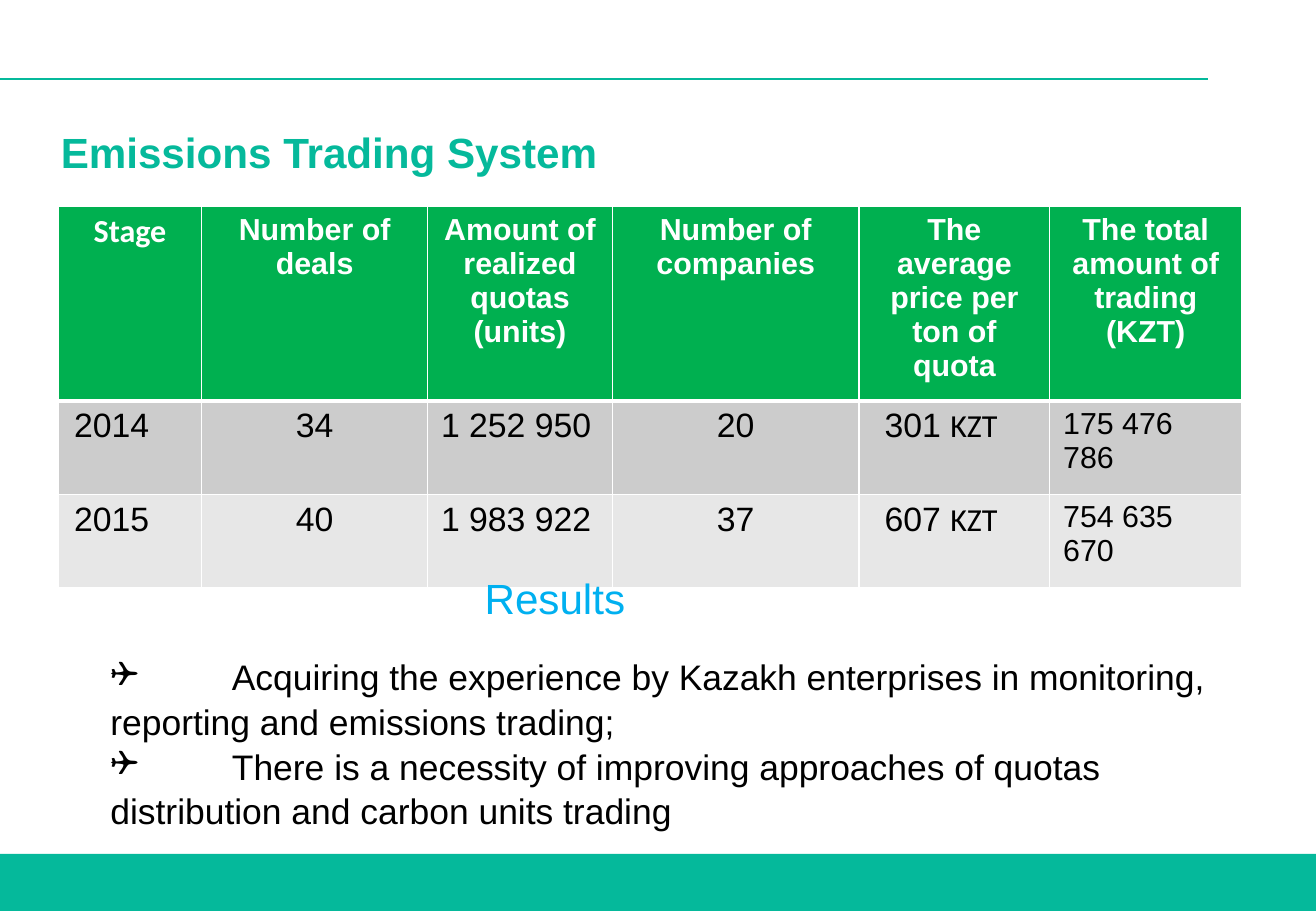
from lxml import etree
from pptx import Presentation
from pptx.dml.color import RGBColor
from pptx.enum.shapes import MSO_CONNECTOR, MSO_SHAPE
from pptx.enum.text import MSO_ANCHOR, PP_ALIGN
from pptx.oxml import parse_xml
from pptx.oxml.ns import nsdecls, qn
from pptx.util import Inches, Pt

LEFT, CENTER, JUSTIFY = PP_ALIGN.LEFT, PP_ALIGN.CENTER, PP_ALIGN.JUSTIFY
BOTTOM = MSO_ANCHOR.BOTTOM
RECT = MSO_SHAPE.RECTANGLE
STRAIGHT = MSO_CONNECTOR.STRAIGHT

THEME = {
    "teal": "05B99B",
    "green": "00B050",
    "white": "FFFFFF",
    "bands": ["CCCCCC", "E7E7E7"],
    "title": ({"size": Pt(25), "bold": True, "name": "Arial"}, "05B99B"),
    "head": ({"size": Pt(18), "bold": True, "name": "Arial"}, "FFFFFF"),
    "stage": ({"size": Pt(19), "bold": True, "name": "Calibri"}, "FFFFFF"),
    "cell": ({"size": Pt(20), "bold": False, "name": "Arial"}, "000000"),
    "unit": ({"size": Pt(19), "bold": False, "name": "Calibri"}, "000000"),
    "total": ({"size": Pt(18), "bold": False, "name": "Arial"}, "000000"),
    "results": ({"size": Pt(25), "bold": False, "name": "Arial"}, "00B0F0"),
    "body": ({"size": Pt(21), "bold": False, "name": "Arial"}, "000000"),
}


def style(font, look):
    values, color = THEME[look]
    for key, value in values.items():
        setattr(font, key, value)
    font.color.rgb = RGBColor.from_string(color)


def write(frame, text, look, align=LEFT):
    frame.word_wrap = True
    frame.text = text
    for para in frame.paragraphs:
        para.alignment = align
        style(para.runs[0].font, look)


deck = Presentation()
deck.slide_width, deck.slide_height = Inches(10.83), Inches(7.5)
slide = deck.slides.add_slide(deck.slide_layouts[6])
shapes = slide.shapes

footer = shapes.add_shape(RECT, 0, Inches(7.03), deck.slide_width, Inches(0.47))
footer.shadow.inherit = False
footer.fill.solid()
footer.fill.fore_color.rgb = RGBColor.from_string(THEME["teal"])
footer.line.fill.background()

rule = shapes.add_connector(STRAIGHT, 0, Inches(0.65), Inches(9.94), Inches(0.65))
rule.line.width = Pt(0.75)
rule.line.color.rgb = RGBColor.from_string(THEME["teal"])
etree.SubElement(rule._element.spPr, qn("a:effectLst"))

title = shapes.add_textbox(Inches(0.5), Inches(0.21), Inches(9.75), Inches(1.25))
frame = title.text_frame
for side in ("left", "top", "right", "bottom"):
    setattr(frame, f"margin_{side}", 0)
frame.vertical_anchor = BOTTOM
write(frame, "Emissions Trading System", "title")
frame.paragraphs[0].line_spacing = 0.9

rows = [
    ["Stage", "Number of\ndeals", "Amount of realized quotas (units)",
     "Number of\ncompanies", "The average price per ton of quota",
     "The total amount of trading (KZT)"],
    ["2014", "34", "1 252 950", "20", "301 ", "175 476 786"],
    ["2015", "40", "1 983 922", "37", "607 ", "754 635 670"],
]
widths = [1.18, 1.86, 1.52, 2.03, 1.57, 1.58]
heights = [1.3, 0.77, 0.77]
aligns = [LEFT, CENTER, LEFT, CENTER, LEFT, LEFT]
insets = [0.13, 0.13, 0.11, 0.13, 0.13, 0.11]
PRICE, TOTAL = 4, 5

table = shapes.add_table(len(rows), len(widths), Inches(0.48), Inches(1.7),
                         Inches(sum(widths)), Inches(sum(heights))).table
for col, width in zip(table.columns, widths):
    col.width = Inches(width)
for row, height in zip(table.rows, heights):
    row.height = Inches(height)

for r, texts in enumerate(rows):
    head = r == 0
    fill = THEME["green"] if head else THEME["bands"][r - 1]
    for c, text in enumerate(texts):
        cell = table.cell(r, c)
        inset = 0.13 if head else insets[c]
        indent = 0.08 if c == PRICE and not head else 0
        cell.margin_left, cell.margin_right = Inches(inset + indent), Inches(inset)
        cell.margin_top = cell.margin_bottom = Inches(0.05)
        props = cell._tc.get_or_add_tcPr()
        edges = {"lnL": 1, "lnR": 1, "lnT": 3 if r == 1 else 1, "lnB": 3 if head else 1}
        for edge, weight in edges.items():
            props.append(parse_xml(
                f'<a:{edge} {nsdecls("a")} w="{Pt(weight)}"><a:solidFill>'
                f'<a:srgbClr val="{THEME["white"]}"/></a:solidFill></a:{edge}>'))
        cell.fill.solid()
        cell.fill.fore_color.rgb = RGBColor.from_string(fill)
        if head:
            look = "stage" if c == 0 else "head"
        else:
            look = "total" if c == TOTAL else "cell"
        write(cell.text_frame, text, look, CENTER if head else aligns[c])
        if c == PRICE and not head:
            unit = cell.text_frame.paragraphs[0].add_run()
            unit.text = "KZT"
            style(unit.font, "unit")

results = shapes.add_textbox(Inches(3.89), Inches(4.66), Inches(2.9), Inches(0.53))
write(results.text_frame, "Results", "results")

points = [
    "Acquiring the experience by Kazakh enterprises in monitoring,",
    "reporting and emissions trading;",
    "There is a necessity of improving approaches of quotas",
    "distribution and carbon units trading",
]
body = shapes.add_textbox(Inches(0.81), Inches(5.33), Inches(9.58), Inches(1.52))
write(body.text_frame, "\n".join(points), "body", JUSTIFY)
for i, para in enumerate(body.text_frame.paragraphs):
    para.line_spacing = 1.05
    if i % 2 == 0:
        props = para._p.get_or_add_pPr()
        props.set("marL", str(Inches(1)))
        props.set("indent", str(-Inches(1)))
        etree.SubElement(props, qn("a:buFont")).set("typeface", "Wingdings")
        etree.SubElement(props, qn("a:buChar")).set("char", "❑")

deck.save("out.pptx")
